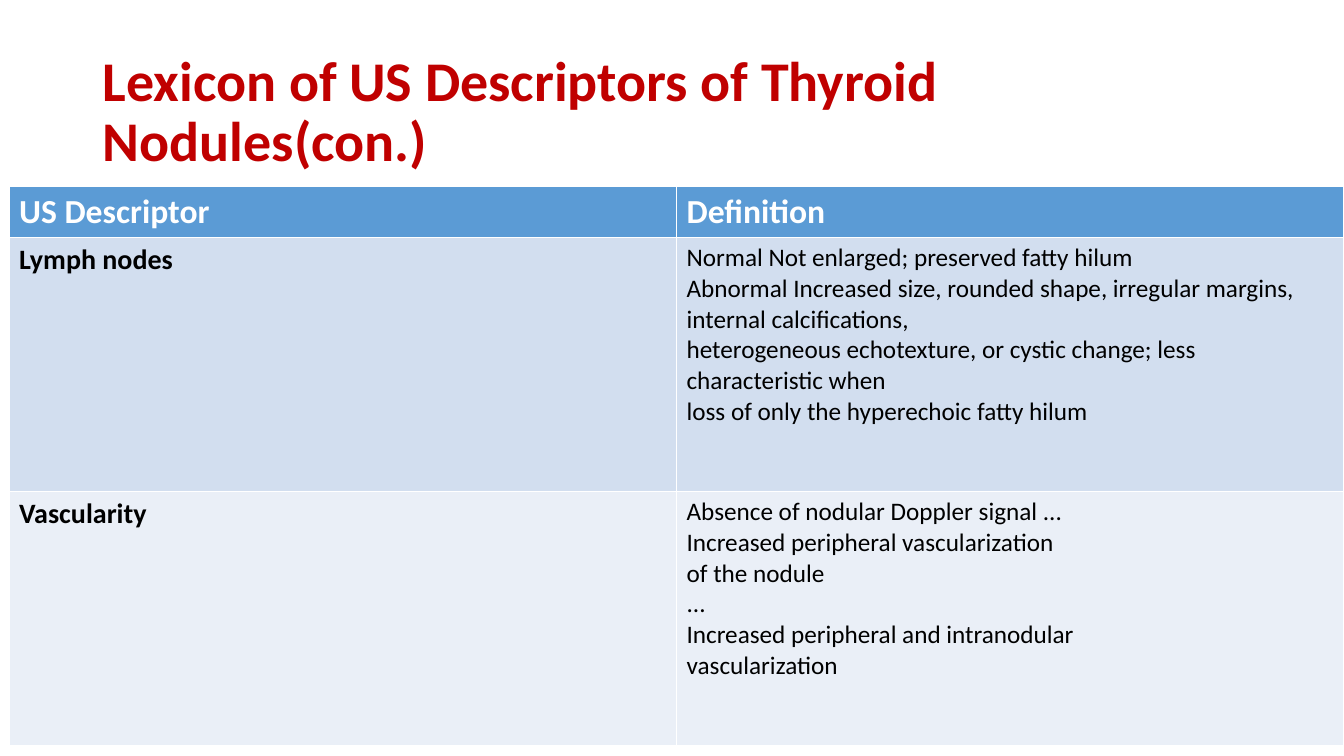
from pptx import Presentation
from pptx.dml.color import RGBColor
from pptx.enum.text import MSO_ANCHOR, MSO_AUTO_SIZE, PP_ALIGN
from pptx.util import Inches, Pt

HEADING = "Lexicon of US Descriptors of Thyroid Nodules(con.)"
COLUMNS = ["US Descriptor", "Definition"]
DESCRIPTORS = [
    ("Lymph nodes", [
        "Normal Not enlarged; preserved fatty hilum",
        "Abnormal Increased size, rounded shape, irregular margins, internal calcifications,",
        "heterogeneous echotexture, or cystic change; less characteristic when",
        "loss of only the hyperechoic fatty hilum",
    ]),
    ("Vascularity", [
        "Absence of nodular Doppler signal ...",
        "Increased peripheral vascularization",
        "of the nodule",
        "...",
        "Increased peripheral and intranodular",
        "vascularization",
    ]),
]
BAND_FILLS = ["D2DEEF", "EAEFF7"]
SLIDE_WIDTH, SLIDE_HEIGHT = 13.33, 7.5
TABLE_LEFT, TABLE_TOP = 0.09, 1.85
HEADER_HEIGHT, BAND_HEIGHT = 0.5, 2.52


def color(value):
    return RGBColor.from_string(value)


def style(paragraph, size, bold, ink):
    font = paragraph.font
    font.name, font.size, font.bold = "Calibri", Pt(size), bold
    font.color.rgb = color(ink)


def fill_cell(cell, lines, size, bold, ink, background):
    cell.fill.solid()
    cell.fill.fore_color.rgb = color(background)
    cell.text = "\n".join(lines)
    for paragraph in cell.text_frame.paragraphs:
        style(paragraph, size, bold, ink)


def add_heading(slide):
    heading = slide.shapes.title
    heading.left, heading.top = Inches(0.92), Inches(0.4)
    heading.width, heading.height = Inches(11.5), Inches(1.45)
    frame = heading.text_frame
    frame.text = HEADING
    frame.word_wrap = True
    frame.auto_size = MSO_AUTO_SIZE.NONE
    frame.vertical_anchor = MSO_ANCHOR.MIDDLE
    paragraph = frame.paragraphs[0]
    paragraph.alignment = PP_ALIGN.LEFT
    paragraph.line_spacing = 0.9
    style(paragraph, 40, True, "C00000")


def add_lexicon(slide):
    heights = [HEADER_HEIGHT] + [BAND_HEIGHT] * len(DESCRIPTORS)
    lexicon = slide.shapes.add_table(
        len(heights), len(COLUMNS), Inches(TABLE_LEFT), Inches(TABLE_TOP),
        Inches(SLIDE_WIDTH - TABLE_LEFT), Inches(sum(heights))).table
    for row, height in zip(lexicon.rows, heights):
        row.height = Inches(height)
    for index, label in enumerate(COLUMNS):
        fill_cell(lexicon.cell(0, index), [label], 24, True, "FFFFFF", "5B9BD5")
    for index, (descriptor, definition) in enumerate(DESCRIPTORS):
        band = BAND_FILLS[index % len(BAND_FILLS)]
        fill_cell(lexicon.cell(index + 1, 0), [descriptor], 20, True, "000000", band)
        fill_cell(lexicon.cell(index + 1, 1), definition, 18, False, "000000", band)


def main():
    deck = Presentation()
    deck.slide_width, deck.slide_height = Inches(SLIDE_WIDTH), Inches(SLIDE_HEIGHT)
    slide = deck.slides.add_slide(deck.slide_layouts.get_by_name("Title Only"))
    add_heading(slide)
    add_lexicon(slide)
    deck.save("out.pptx")


if __name__ == "__main__":
    main()
